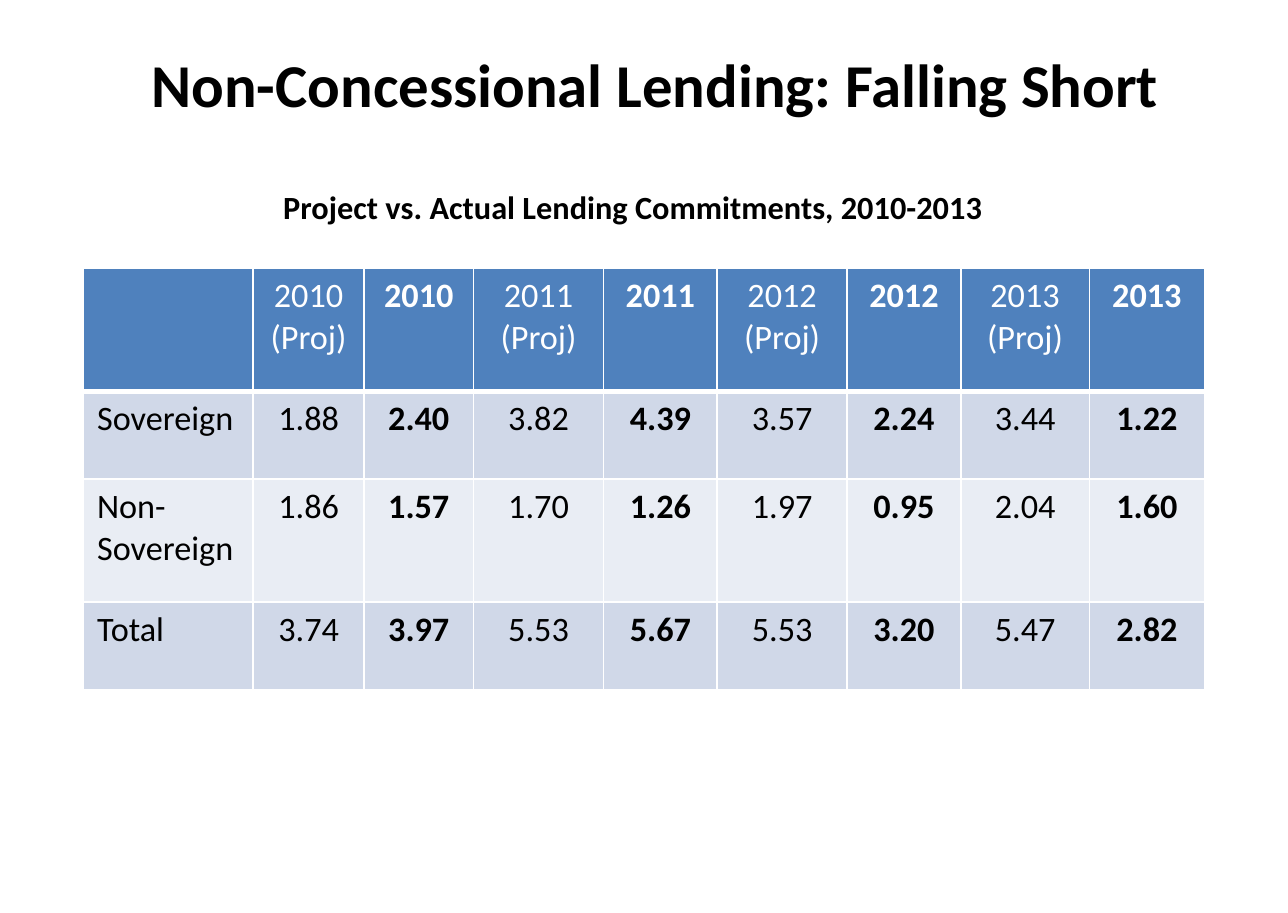
from dataclasses import dataclass

from lxml import etree
from pptx import Presentation
from pptx.dml.color import RGBColor
from pptx.enum.text import MSO_ANCHOR, PP_ALIGN
from pptx.oxml.ns import qn
from pptx.util import Inches, Pt

CENTER, LEFT = PP_ALIGN.CENTER, PP_ALIGN.LEFT
MIDDLE, TOP = MSO_ANCHOR.MIDDLE, MSO_ANCHOR.TOP
FONT = "Calibri"
COLORS = {
    "text": "000000",
    "white": "FFFFFF",
    "header": "4F81BD",
    "dark_band": "D0D8E8",
    "light_band": "E9EDF4",
}
COLUMN_WIDTHS = [1.24, 0.81, 0.8, 0.95, 0.83, 0.95, 0.83, 0.94, 0.84]
ROW_HEIGHTS = [0.9, 0.64, 0.9, 0.64]
YEARS = range(2010, 2014)
HEADER = [""] + [label for year in YEARS for label in (f"{year}\n(Proj)", f"{year}")]
LENDING = [
    HEADER,
    ["Sovereign", "1.88", "2.40", "3.82", "4.39", "3.57", "2.24", "3.44", "1.22"],
    ["Non-Sovereign", "1.86", "1.57", "1.70", "1.26", "1.97", "0.95", "2.04", "1.60"],
    ["Total", "3.74", "3.97", "5.53", "5.67", "5.53", "3.20", "5.47", "2.82"],
]


@dataclass
class Heading:
    """A bold line of text above the table."""

    text: str
    left: float
    top: float
    width: float
    height: float
    size: int
    align: PP_ALIGN
    anchor: MSO_ANCHOR


HEADINGS = [
    Heading("Non-Concessional Lending: Falling Short",
            0.35, 0.27, 8.88, 0.68, 32, CENTER, MIDDLE),
    Heading("Project vs. Actual Lending Commitments, 2010-2013",
            1.97, 1.32, 5.41, 0.39, 17, LEFT, TOP),
]


def format_text(frame, size: int, color: str, bold: bool, align: PP_ALIGN) -> None:
    """Apply one style to every paragraph of a text frame."""
    for para in frame.paragraphs:
        para.alignment = align
        for span in para.runs:
            span.font.name = FONT
            span.font.size = Pt(size)
            span.font.bold = bold
            span.font.color.rgb = RGBColor.from_string(COLORS[color])


def add_heading(page, heading: Heading) -> None:
    """Draw one heading as a text box."""
    box = page.shapes.add_textbox(Inches(heading.left), Inches(heading.top),
                                  Inches(heading.width), Inches(heading.height))
    frame = box.text_frame
    frame.word_wrap = True
    frame.vertical_anchor = heading.anchor
    frame.text = heading.text
    format_text(frame, heading.size, "text", True, heading.align)


def set_borders(cell, top: int, bottom: int) -> None:
    """Give a cell white borders with the given top and bottom weights."""
    properties = cell._tc.get_or_add_tcPr()
    for side, weight in (("L", 1), ("R", 1), ("T", top), ("B", bottom)):
        line = etree.SubElement(properties, qn(f"a:ln{side}"), w=str(Pt(weight)))
        fill = etree.SubElement(line, qn("a:solidFill"))
        etree.SubElement(fill, qn("a:srgbClr"), val=COLORS["white"])


def add_lending_table(page) -> None:
    """Draw the table of projected and actual lending."""
    frame = page.shapes.add_table(len(ROW_HEIGHTS), len(COLUMN_WIDTHS),
                                  Inches(0.61), Inches(1.96),
                                  Inches(sum(COLUMN_WIDTHS)), Inches(sum(ROW_HEIGHTS)))
    table = frame.table
    for column, width in zip(table.columns, COLUMN_WIDTHS):
        column.width = Inches(width)
    for row, height in zip(table.rows, ROW_HEIGHTS):
        row.height = Inches(height)
    bands = ["header", "dark_band", "light_band", "dark_band"]
    for row_index, (labels, band) in enumerate(zip(LENDING, bands)):
        for column_index, label in enumerate(labels):
            cell = table.cell(row_index, column_index)
            set_borders(cell, top=3 if row_index == 1 else 1,
                        bottom=3 if row_index == 0 else 1)
            cell.fill.solid()
            cell.fill.fore_color.rgb = RGBColor.from_string(COLORS[band])
            cell.text_frame.text = label
            is_actual = column_index > 0 and column_index % 2 == 0
            format_text(cell.text_frame, 18, "white" if row_index == 0 else "text",
                        is_actual, CENTER if column_index else LEFT)


def main() -> None:
    """Build the slide and save it."""
    deck = Presentation()
    deck.slide_width, deck.slide_height = Inches(9.41), Inches(6.67)
    page = deck.slides.add_slide(deck.slide_layouts[6])
    for heading in HEADINGS:
        add_heading(page, heading)
    add_lending_table(page)
    deck.save("out.pptx")


if __name__ == "__main__":
    main()
